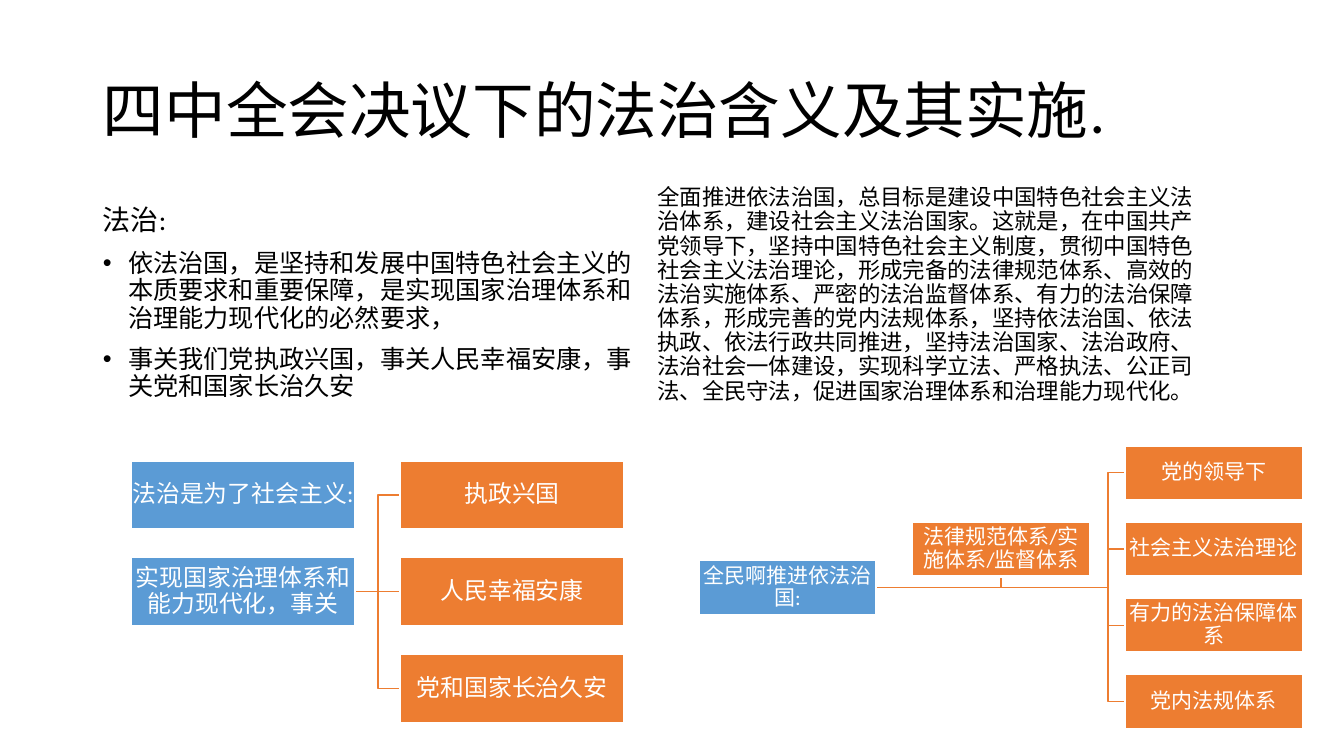
from lxml.etree import SubElement
from pptx import Presentation
from pptx.dml.color import RGBColor
from pptx.enum.shapes import MSO_CONNECTOR, MSO_SHAPE
from pptx.enum.text import MSO_ANCHOR, MSO_AUTO_SIZE, PP_ALIGN
from pptx.oxml.ns import qn
from pptx.util import Inches, Pt

BLACK = RGBColor(0x00, 0x00, 0x00)
WHITE = RGBColor(0xFF, 0xFF, 0xFF)
BLUE = RGBColor(0x5B, 0x9B, 0xD5)
ORANGE = RGBColor(0xED, 0x7D, 0x31)
FONT = "Calibri"

TITLE = "四中全会决议下的法治含义及其实施."
MEANING = [
    ("法治:", 20, False),
    ("依法治国，是坚持和发展中国特色社会主义的本质要求和重要保障，是实现国家治理体系和治理能力现代化的必然要求，", 18, True),
    ("事关我们党执政兴国，事关人民幸福安康，事关党和国家长治久安", 18, True),
]
GOAL = [
    ("全面推进依法治国，总目标是建设中国特色社会主义法治体系，建设社会主义法治国家。"
     "这就是，在中国共产党领导下，坚持中国特色社会主义制度，贯彻中国特色社会主义法治理论，"
     "形成完备的法律规范体系、高效的法治实施体系、严密的法治监督体系、有力的法治保障体系，"
     "形成完善的党内法规体系，坚持依法治国、依法执政、依法行政共同推进，"
     "坚持法治国家、法治政府、法治社会一体建设，实现科学立法、严格执法、公正司法、全民守法，"
     "促进国家治理体系和治理能力现代化。", 16, False),
]
PURPOSE = "法治是为了社会主义:"
PURPOSE_ROOT = "实现国家治理体系和能力现代化，事关"
PURPOSE_BRANCHES = ["执政兴国", "人民幸福安康", "党和国家长治久安"]
SYSTEM_ROOT = "全民啊推进依法治国:"
SYSTEM_ASSISTANT = "法律规范体系/实施体系/监督体系"
SYSTEM_BRANCHES = ["党的领导下", "社会主义法治理论", "有力的法治保障体系", "党内法规体系"]

PURPOSE_SIZE = (2.22, 0.68, 17)
SYSTEM_SIZE = (1.76, 0.54, 15)


def style_font(font, size, color):
    font.name = FONT
    font.size = Pt(size)
    font.color.rgb = color


def fill_placeholder(holder, paragraphs, left, top, width, height):
    holder.left, holder.top = Inches(left), Inches(top)
    holder.width, holder.height = Inches(width), Inches(height)
    frame = holder.text_frame
    frame.auto_size = MSO_AUTO_SIZE.NONE
    for index, (text, size, bulleted) in enumerate(paragraphs):
        para = frame.paragraphs[0] if index == 0 else frame.add_paragraph()
        para.text = text
        para.alignment = PP_ALIGN.LEFT
        para.line_spacing = 0.9
        para.space_before = Pt(10 if index else 0)
        properties = para._p.get_or_add_pPr()
        indent = Inches(0.25) if bulleted else 0
        properties.set("marL", str(indent))
        properties.set("indent", str(-indent))
        if bulleted:
            SubElement(properties, qn("a:buFont"), typeface="Arial")
            SubElement(properties, qn("a:buChar"), char="•")
        else:
            SubElement(properties, qn("a:buNone"))
        style_font(para.font, size, BLACK)


def add_box(page, text, left, top, box_size, color):
    width, height, size = box_size
    box = page.shapes.add_shape(MSO_SHAPE.RECTANGLE, Inches(left), Inches(top), Inches(width), Inches(height))
    box.shadow.inherit = False
    box.fill.solid()
    box.fill.fore_color.rgb = color
    box.line.color.rgb = WHITE
    box.line.width = Pt(1.5)
    frame = box.text_frame
    frame.word_wrap = True
    frame.vertical_anchor = MSO_ANCHOR.MIDDLE
    frame.margin_left = frame.margin_right = Inches(0.01)
    frame.margin_top = frame.margin_bottom = Inches(0.01)
    para = frame.paragraphs[0]
    para.text = text
    para.alignment = PP_ALIGN.CENTER
    para.line_spacing = 0.9
    style_font(para.font, size, WHITE)
    return box


def add_column(page, texts, left, top, pitch, box_size):
    return [add_box(page, text, left, top + row * pitch, box_size, ORANGE) for row, text in enumerate(texts)]


def right_middle(box):
    return box.left + box.width, box.top + box.height // 2


def draw_path(page, root, points):
    builder = page.shapes.build_freeform(*right_middle(root))
    builder.add_line_segments(points, close=False)
    path = builder.convert_to_shape()
    path.shadow.inherit = False
    path.fill.background()
    path.line.color.rgb = ORANGE
    path.line.width = Pt(1)
    root.element.addprevious(path.element)


def draw_straight(page, root, branch):
    line = page.shapes.add_connector(MSO_CONNECTOR.STRAIGHT, 0, 0, 0, 0)
    line.begin_connect(root, 3)
    line.end_connect(branch, 1)
    line.line.color.rgb = ORANGE
    line.line.width = Pt(1)
    SubElement(line.element.spPr, qn("a:effectLst"))
    root.element.addprevious(line.element)


def join_branches(page, root, branches, trunk):
    start_y = right_middle(root)[1]
    for branch in branches:
        end_y = right_middle(branch)[1]
        if end_y == start_y:
            draw_straight(page, root, branch)
        else:
            draw_path(page, root, [(Inches(trunk), start_y), (Inches(trunk), end_y), (branch.left, end_y)])


def main():
    deck = Presentation()
    deck.slide_width, deck.slide_height = Inches(13.33), Inches(7.5)
    page = deck.slides.add_slide(deck.slide_layouts[3])

    title, meaning, goal = page.placeholders
    fill_placeholder(title, [(TITLE, 44, False)], 0.92, 0.4, 11.5, 1.45)
    title.text_frame.vertical_anchor = MSO_ANCHOR.MIDDLE
    fill_placeholder(meaning, MEANING, 0.92, 2, 5.67, 4.76)
    fill_placeholder(goal, GOAL, 6.42, 1.8, 5.67, 4.76)

    purpose_root = add_box(page, PURPOSE_ROOT, 1.3, 5.53, PURPOSE_SIZE, BLUE)
    add_box(page, PURPOSE, 1.3, 4.57, PURPOSE_SIZE, BLUE)
    purpose_branches = add_column(page, PURPOSE_BRANCHES, 3.97, 4.57, 0.96, PURPOSE_SIZE)
    join_branches(page, purpose_root, purpose_branches, 3.75)

    system_root = add_box(page, SYSTEM_ROOT, 6.93, 5.56, SYSTEM_SIZE, BLUE)
    assistant = add_box(page, SYSTEM_ASSISTANT, 9.05, 5.18, SYSTEM_SIZE, ORANGE)
    system_branches = add_column(page, SYSTEM_BRANCHES, 11.16, 4.42, 0.757, SYSTEM_SIZE)
    join_branches(page, system_root, system_branches, 10.99)
    center = assistant.left + assistant.width // 2
    draw_path(page, system_root, [(center, right_middle(system_root)[1]), (center, assistant.top + assistant.height)])

    deck.save("out.pptx")


if __name__ == "__main__":
    main()
